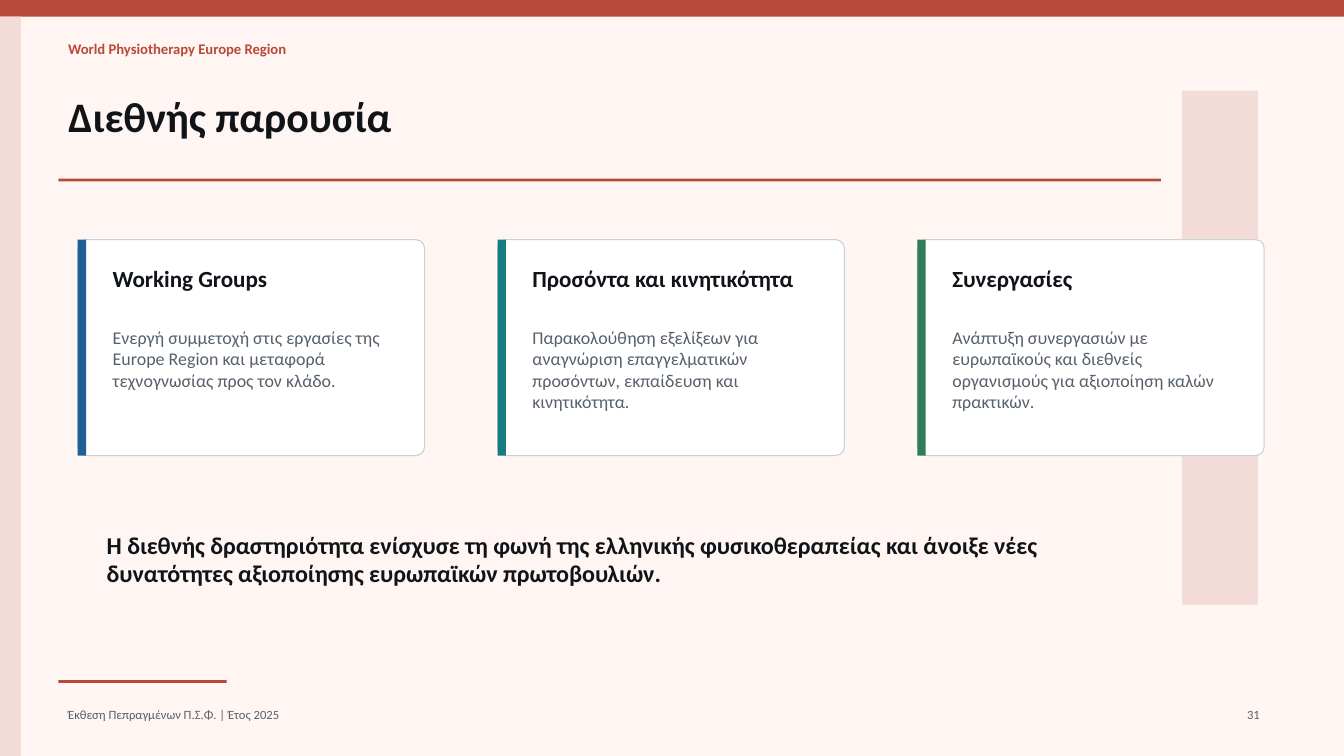
from pptx import Presentation
from pptx.dml.color import RGBColor
from pptx.enum.shapes import MSO_SHAPE
from pptx.enum.text import MSO_ANCHOR, MSO_AUTO_SIZE, PP_ALIGN
from pptx.util import Cm, Pt

RECT = MSO_SHAPE.RECTANGLE
ROUND = MSO_SHAPE.ROUNDED_RECTANGLE
TOP = MSO_ANCHOR.TOP
FIXED = MSO_AUTO_SIZE.NONE
LEFT = PP_ALIGN.LEFT
RIGHT = PP_ALIGN.RIGHT

FONT = "Calibri"
COLORS = {
    "paper": "FFF5F3",
    "brick": "B84A3A",
    "blush": "F3DCD7",
    "ink": "101418",
    "grey": "56606B",
    "white": "FFFFFF",
    "edge": "C8D0D8",
    "blue": "1F5E99",
    "teal": "167C80",
    "green": "2F7D5B",
}

MARGIN = 1.47
CARD_LEFT, CARD_TOP = 1.96, 6.04
CARD_WIDTH, CARD_HEIGHT = 8.74, 5.44
CARD_STEP = 10.58
CARDS = [
    ("blue", "Working Groups",
     "Ενεργή συμμετοχή στις εργασίες της Europe Region και μεταφορά "
     "τεχνογνωσίας προς τον κλάδο."),
    ("teal", "Προσόντα και κινητικότητα",
     "Παρακολούθηση εξελίξεων για αναγνώριση επαγγελματικών προσόντων, "
     "εκπαίδευση και κινητικότητα."),
    ("green", "Συνεργασίες",
     "Ανάπτυξη συνεργασιών με ευρωπαϊκούς και διεθνείς οργανισμούς για "
     "αξιοποίηση καλών πρακτικών."),
]


def color(name):
    return RGBColor.from_string(COLORS[name])


def add_block(slide, left, top, width, height, fill, kind=RECT):
    block = slide.shapes.add_shape(
        kind, Cm(left), Cm(top), Cm(width), Cm(height))
    block.shadow.inherit = False
    block.fill.solid()
    block.fill.fore_color.rgb = color(fill)
    block.line.fill.background()
    return block


def set_text(shape, text, size, tint, bold=False, align=LEFT):
    frame = shape.text_frame
    frame.text = text
    frame.word_wrap = True
    frame.auto_size = FIXED
    frame.vertical_anchor = TOP
    para = frame.paragraphs[0]
    para.alignment = align
    font = para.runs[0].font
    font.name = FONT
    font.size = Pt(size)
    font.bold = bold
    font.color.rgb = color(tint)


def add_text(slide, left, top, width, height, *style, **extra):
    box = slide.shapes.add_textbox(
        Cm(left), Cm(top), Cm(width), Cm(height))
    set_text(box, *style, **extra)


def add_title(slide, text):
    title = slide.shapes.title
    title.left, title.top = Cm(MARGIN), Cm(2.16)
    title.width, title.height = Cm(29.64), Cm(2.16)
    set_text(title, text, 30, "ink", bold=True)


def add_card(slide, left, accent, head, body):
    card = add_block(slide, left, CARD_TOP, CARD_WIDTH, CARD_HEIGHT,
                     "white", ROUND)
    card.adjustments[0] = 0.04
    card.line.color.rgb = color("edge")
    card.line.width = Pt(0.75)
    add_block(slide, left, CARD_TOP, 0.21, CARD_HEIGHT, accent)
    inner = left + 0.63
    add_text(slide, inner, CARD_TOP + 0.51, 7.47, 1.27,
             head, 16.5, "ink", bold=True)
    add_text(slide, inner, CARD_TOP + 2.06, 7.47, 3.1, body, 12.8, "grey")


def main():
    deck = Presentation()
    deck.slide_width, deck.slide_height = Cm(33.87), Cm(19.05)
    slide = deck.slides.add_slide(deck.slide_layouts.get_by_name("Title Only"))
    slide.background.fill.solid()
    slide.background.fill.fore_color.rgb = color("paper")

    add_block(slide, 0, 0, 33.87, 0.42, "brick")
    add_block(slide, 0, 0.42, 0.53, 18.63, "blush")
    add_block(slide, 29.79, 2.29, 1.91, 12.95, "blush")

    add_text(slide, MARGIN, 0.89, 18.52, 0.74,
             "World Physiotherapy Europe Region", 10.5, "brick", bold=True)
    add_title(slide, "Διεθνής παρουσία")
    add_block(slide, MARGIN, 4.5, 27.79, 0.07, "brick")

    for index, card in enumerate(CARDS):
        add_card(slide, CARD_LEFT + index * CARD_STEP, *card)

    add_text(slide, 2.44, 13.23, 27.25, 1.47,
             "Η διεθνής δραστηριότητα ενίσχυσε τη φωνή της ελληνικής "
             "φυσικοθεραπείας και άνοιξε νέες δυνατότητες αξιοποίησης "
             "ευρωπαϊκών πρωτοβουλιών.", 17.2, "ink", bold=True)

    add_block(slide, MARGIN, 17.14, 4.24, 0.07, "brick")
    add_text(slide, MARGIN, 17.68, 17.98, 0.64,
             "Έκθεση Πεπραγμένων Π.Σ.Φ. | Έτος 2025", 9, "grey")
    add_text(slide, 30.43, 17.68, 1.57, 0.64, "31", 9, "grey", align=RIGHT)

    deck.save("out.pptx")


if __name__ == "__main__":
    main()
